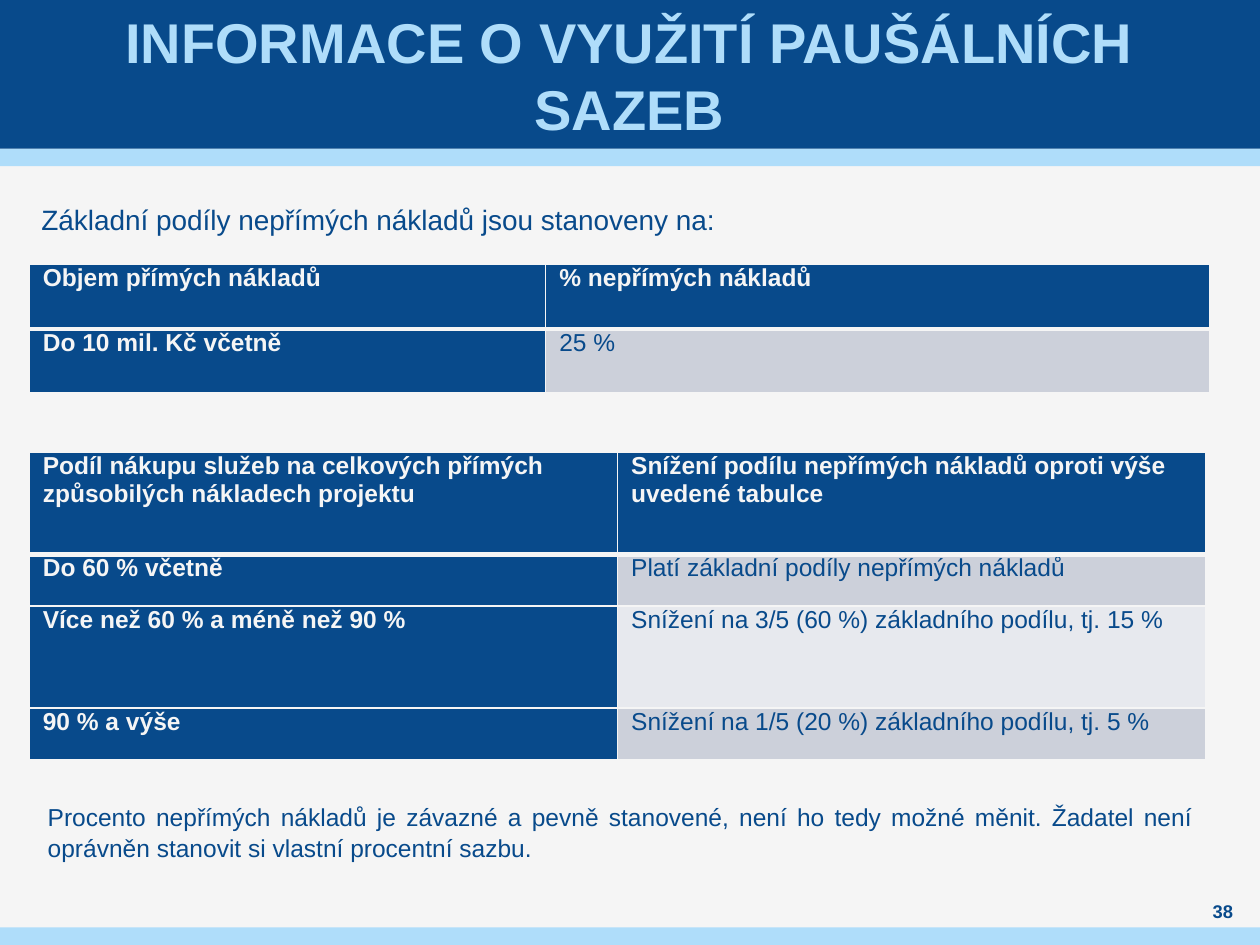
import pptx
import pptx.util
from pptx.dml.color import RGBColor
from pptx.enum.shapes import MSO_SHAPE
from pptx.enum.text import MSO_ANCHOR, PP_ALIGN
from pptx.oxml import parse_xml
from pptx.oxml.ns import nsdecls
from pptx.util import Inches, Pt

NAVY = RGBColor(0x08, 0x4A, 0x8B)
SKY = RGBColor(0xAF, 0xDD, 0xFA)
PAPER = RGBColor(0xF5, 0xF5, 0xF5)
BANDS = (RGBColor(0xCC, 0xD0, 0xDA), RGBColor(0xE7, 0xE9, 0xEE))
FONT = "Arial"


class SlideBuilder:
    def __init__(self, prs):
        self.s = prs.slides.add_slide(prs.slide_layouts[6])
        fill = self.s.background.fill
        fill.solid()
        fill.fore_color.rgb = PAPER

    def style(self, p, size, color, bold=False):
        p.font.name = FONT
        p.font.size = Pt(size)
        p.font.color.rgb = color
        p.font.bold = bold

    def bar(self, top, height, color):
        sp = self.s.shapes.add_shape(
            MSO_SHAPE.RECTANGLE, 0, Inches(top), Inches(10), Inches(height))
        sp.shadow.inherit = False
        sp.fill.solid()
        sp.fill.fore_color.rgb = color
        sp.line.fill.background()

    def text(self, box, text, size, color=NAVY, bold=False,
             align=PP_ALIGN.LEFT, anchor=MSO_ANCHOR.TOP, margins=(0.1, 0.05)):
        tf = self.s.shapes.add_textbox(*map(Inches, box)).text_frame
        tf.word_wrap = True
        tf.vertical_anchor = anchor
        tf.margin_left = tf.margin_right = Inches(margins[0])
        tf.margin_top = tf.margin_bottom = Inches(margins[1])
        p = tf.paragraphs[0]
        p.text = text
        p.alignment = align
        self.style(p, size, color, bold)
        return p

    def borders(self, cell, bottom):
        """Draw 1 pt cell borders, with a bottom one of the given points."""
        tcPr = cell._tc.get_or_add_tcPr()
        widths = {"lnL": 1, "lnR": 1, "lnT": 1, "lnB": bottom}
        for i, (tag, width) in enumerate(widths.items()):
            tcPr.insert(i, parse_xml(
                f'<a:{tag} {nsdecls("a")} w="{Pt(width)}"><a:solidFill>'
                f'<a:srgbClr val="{PAPER}"/></a:solidFill></a:{tag}>'))

    def table(self, left, top, widths, heights, rows):
        """Add a table whose first row and first column are headings."""
        table = self.s.shapes.add_table(
            len(rows), len(widths), Inches(left), Inches(top),
            Inches(sum(widths)), Inches(sum(heights))).table
        for column, width in zip(table.columns, widths):
            column.width = Inches(width)
        for i, (height, row) in enumerate(zip(heights, rows)):
            table.rows[i].height = Inches(height)
            for j, text in enumerate(row):
                heading = i == 0 or j == 0
                cell = table.cell(i, j)
                cell.margin_left = cell.margin_right = Inches(0.07)
                cell.margin_top = cell.margin_bottom = 0
                cell.fill.solid()
                cell.fill.fore_color.rgb = NAVY if heading else BANDS[(i - 1) % 2]
                self.borders(cell, 3 if i == 0 else 1)
                p = cell.text_frame.paragraphs[0]
                p.text = text
                p.space_before = p.space_after = Pt(3)
                p._p.get_or_add_pPr().set("marL", str(Inches(0.04)))
                self.style(p, 14, PAPER if heading else NAVY, heading)


def main():
    prs = pptx.Presentation()
    prs.slide_width, prs.slide_height = Inches(10), Inches(7.5)
    b = SlideBuilder(prs)

    b.bar(1.18, 0.14, SKY)
    b.bar(0, 1.18, NAVY)
    b.bar(7.36, 0.14, SKY)
    b.text((0.39, 0, 9.21, 1.18), "INFORMACE O VYUŽITÍ PAUŠÁLNÍCH SAZEB", 32, SKY,
           True, PP_ALIGN.CENTER, MSO_ANCHOR.MIDDLE, (0.04, 0))
    number = b.text((9.45, 7.13, 0.51, 0.2), "38", 10.5, NAVY, True,
                    PP_ALIGN.CENTER, MSO_ANCHOR.MIDDLE, (0, 0))
    number.space_after = Pt(6)

    b.text((0.23, 1.56, 8.25, 0.64),
           "Základní podíly nepřímých nákladů jsou stanoveny na:", 16)
    b.table(0.23, 2.1, (4.1, 5.27), (0.51, 0.51), (
        ("Objem přímých nákladů", "% nepřímých nákladů"),
        ("Do 10 mil. Kč včetně", "25 %"),
    ))
    b.table(0.23, 3.59, (4.67, 4.67), (0.81, 0.41, 0.81, 0.41), (
        ("Podíl nákupu služeb na celkových přímých způsobilých nákladech projektu",
         "Snížení podílu nepřímých nákladů oproti výše uvedené tabulce"),
        ("Do 60 % včetně", "Platí základní podíly nepřímých nákladů"),
        ("Více než 60 % a méně než 90 %",
         "Snížení na 3/5 (60 %) základního podílu, tj. 15 %"),
        ("90 % a výše", "Snížení na 1/5 (20 %) základního podílu, tj. 5 %"),
    ))
    note = b.text(
        (0.28, 6.3, 9.29, 0.59),
        "Procento nepřímých nákladů je závazné a pevně stanovené, není ho tedy možné "
        "měnit. Žadatel není oprávněn stanovit si vlastní procentní sazbu.",
        14, align=PP_ALIGN.JUSTIFY)
    note.line_spacing = 1.07
    note.space_after = Pt(8)

    prs.save("out.pptx")


if __name__ == "__main__":
    main()
